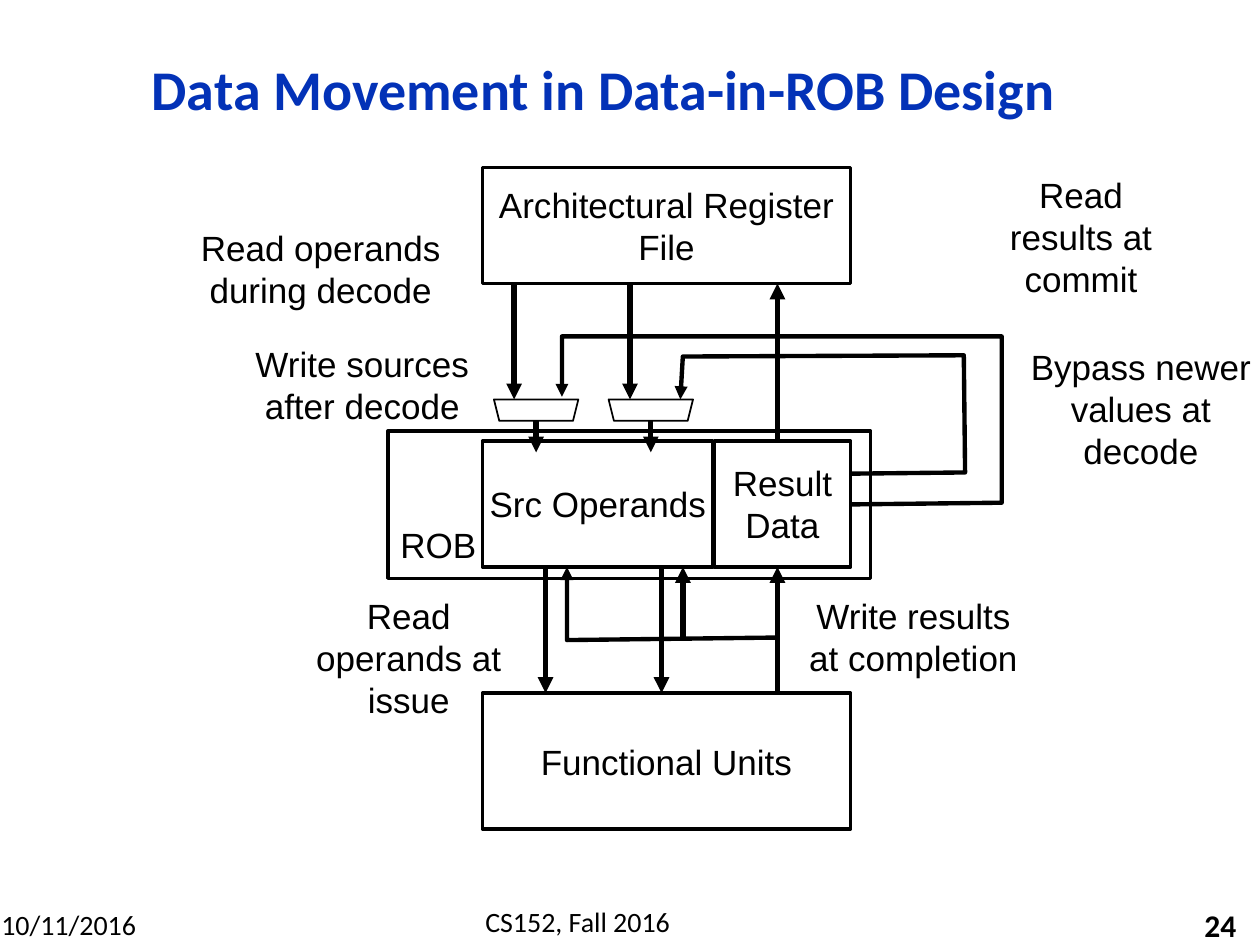
from lxml import etree
from pptx import Presentation
from pptx.dml.color import RGBColor
from pptx.enum import shapes, text
from pptx.oxml.ns import qn
from pptx.util import Inches, Pt

THEME = {
    "ink": RGBColor(0, 0, 0), "paper": RGBColor(255, 255, 255),
    "title": RGBColor(0x03, 0x32, 0xB7),
    "heading_font": "Calibri", "body_font": "Arial",
    "title_size": 32, "body_size": 20, "footer_size": 16, "number_size": 18,
    "box_line": 2, "mux_line": 1, "arrow_line": 3, "path_line": 2.5,
}
CENTER, LEFT, RIGHT = text.PP_ALIGN.CENTER, text.PP_ALIGN.LEFT, text.PP_ALIGN.RIGHT
TOP, MIDDLE, BOTTOM = (text.MSO_ANCHOR.TOP, text.MSO_ANCHOR.MIDDLE,
                       text.MSO_ANCHOR.BOTTOM)

# Block edges shared by the diagram
LEFT_EDGE, BLOCK_WIDTH = 3.83, 2.92
FILE_BOTTOM, ROB_TOP, ROB_BOTTOM, UNITS_TOP = 2.25, 3.5, 4.5, 5.5
MUX_TOP, MUX_WIDTH, MUX_HEIGHT = 3.17, 0.67, 0.17
RESULT_X, JOIN_Y = 6.17, 5.08
MUX_LEFTS = (3.92, 4.83)

ROB = ("ROB", (3.08, 3.42, 3.83, 1.17))
BLOCKS = [
    ("Architectural Register File", (LEFT_EDGE, 1.33, BLOCK_WIDTH, 0.92)),
    ("Src Operands", (LEFT_EDGE, ROB_TOP, 1.83, 1)),
    ("Functional Units", (LEFT_EDGE, UNITS_TOP, BLOCK_WIDTH, 1.08)),
]
RESULT = ("Result Data", (5.67, ROB_TOP, 1.08, 1))
LABELS = [
    ("Read operands during decode", (1.42, 1.75, 2.25, 0.77)),
    ("Write sources after decode", (1.75, 2.67, 2.25, 0.77)),
    ("Read operands at issue", (2.33, 4.67, 1.83, 1.11)),
    ("Write results at completion", (6.25, 4.67, 2, 0.77)),
    ("Read results at commit", (7.83, 1.33, 1.5, 1.11)),
    ("Bypass newer values at decode", (8.08, 2.69, 1.95, 1.11)),
]
# x, start y, end y
ARROWS = [
    *((x, FILE_BOTTOM, MUX_TOP) for x in (4.08, 5)),
    *((left + MUX_WIDTH / 2, MUX_TOP + MUX_HEIGHT, 3.59) for left in MUX_LEFTS),
    *((x, ROB_BOTTOM, UNITS_TOP) for x in (4.33, 5.25)),
    (RESULT_X, UNITS_TOP, ROB_BOTTOM),
    (RESULT_X, ROB_TOP, FILE_BOTTOM),
    (5.42, JOIN_Y, ROB_BOTTOM),
]
BYPASSES = [
    [(6.7, 3.76), (7.66, 3.75), (7.65, 2.82), (5.42, 2.83), (5.4, MUX_TOP)],
    [(6.18, 4.01), (7.95, 3.99), (7.95, 2.67), (4.46, 2.67), (4.46, 3.15)],
]
WRITE_BACK = [(RESULT_X, 5.06), (4.5, JOIN_Y), (4.5, ROB_BOTTOM)]


def write(shape, words, size, font="body_font", color="ink", bold=False,
          align=CENTER, anchor=TOP, insets=(0.1, 0.05), wrap=True):
    frame = shape.text_frame
    frame.word_wrap = wrap
    frame.vertical_anchor = anchor
    frame.margin_left = frame.margin_right = Inches(insets[0])
    frame.margin_top = frame.margin_bottom = Inches(insets[1])
    paragraph = frame.paragraphs[0]
    paragraph.text = words
    paragraph.alignment = align
    paragraph.font.name = THEME[font]
    paragraph.font.size = Pt(THEME[size])
    paragraph.font.bold = bold
    paragraph.font.color.rgb = THEME[color]
    return paragraph


def add_text(slide, words, place, size, **style):
    return write(slide.shapes.add_textbox(*map(Inches, place)), words, size, **style)


def add_outlined(slide, kind, place, width):
    shape = slide.shapes.add_shape(kind, *map(Inches, place))
    shape.shadow.inherit = False
    shape.fill.solid()
    shape.fill.fore_color.rgb = THEME["paper"]
    set_line(shape, width)
    return shape


def add_block(slide, words, place, **style):
    block = add_outlined(slide, shapes.MSO_SHAPE.RECTANGLE, place, "box_line")
    write(block, words, "body_size", **style)


def set_line(shape, width):
    shape.line.color.rgb = THEME["ink"]
    shape.line.width = Pt(THEME[width])


def add_arrowhead(shape):
    line = shape.line._get_or_add_ln()
    etree.SubElement(line, qn("a:round"))
    etree.SubElement(line, qn("a:tailEnd"), type="triangle")


def add_arrow(slide, x, start, end):
    arrow = slide.shapes.add_connector(
        shapes.MSO_CONNECTOR.STRAIGHT, *map(Inches, (x, start, x, end)))
    set_line(arrow, "arrow_line")
    add_arrowhead(arrow)
    etree.SubElement(arrow._element.spPr, qn("a:effectLst"))


def add_route(slide, points):
    """Draw an open bent line with an arrowhead at its last point."""
    start, *rest = [tuple(map(Inches, point)) for point in points]
    builder = slide.shapes.build_freeform(*start)
    builder.add_line_segments(rest, close=False)
    route = builder.convert_to_shape()
    route.shadow.inherit = False
    route.fill.background()
    set_line(route, "path_line")
    add_arrowhead(route)


def main():
    presentation = Presentation()
    presentation.slide_width, presentation.slide_height = Inches(10), Inches(7.5)
    slide = presentation.slides.add_slide(presentation.slide_layouts[6])

    add_text(slide, "10/11/2016", (-0.1, 7.15, 1.29, 0.37), "footer_size",
             font="heading_font", wrap=False)
    add_text(slide, "CS152, Fall 2016", (2.92, 7.13, 3.33, 0.37), "footer_size",
             font="heading_font")
    add_text(slide, "24", (7.83, 7.18, 2.08, 0.32), "number_size",
             font="heading_font", bold=True, align=RIGHT, anchor=MIDDLE)
    title = add_text(slide, "Data Movement in Data-in-ROB Design",
                     (0.58, 0.33, 8.42, 0.81), "title_size", font="heading_font",
                     color="title", bold=True, anchor=MIDDLE)
    title.line_spacing = 0.9

    add_block(slide, *ROB, align=LEFT, anchor=BOTTOM, insets=(0.1, 0.1))
    for words, place in BLOCKS:
        add_block(slide, words, place, anchor=MIDDLE, insets=(0, 0))
    for words, place in LABELS:
        add_text(slide, words, place, "body_size")
    for arrow in ARROWS:
        add_arrow(slide, *arrow)
    for points in BYPASSES:
        add_route(slide, points)
    for left in MUX_LEFTS:
        mux = add_outlined(slide, shapes.MSO_SHAPE.TRAPEZOID,
                           (left, MUX_TOP, MUX_WIDTH, MUX_HEIGHT), "mux_line")
        mux.rotation = 180
    add_block(slide, *RESULT, anchor=MIDDLE, insets=(0, 0))
    add_route(slide, WRITE_BACK)

    presentation.save("out.pptx")


if __name__ == "__main__":
    main()
